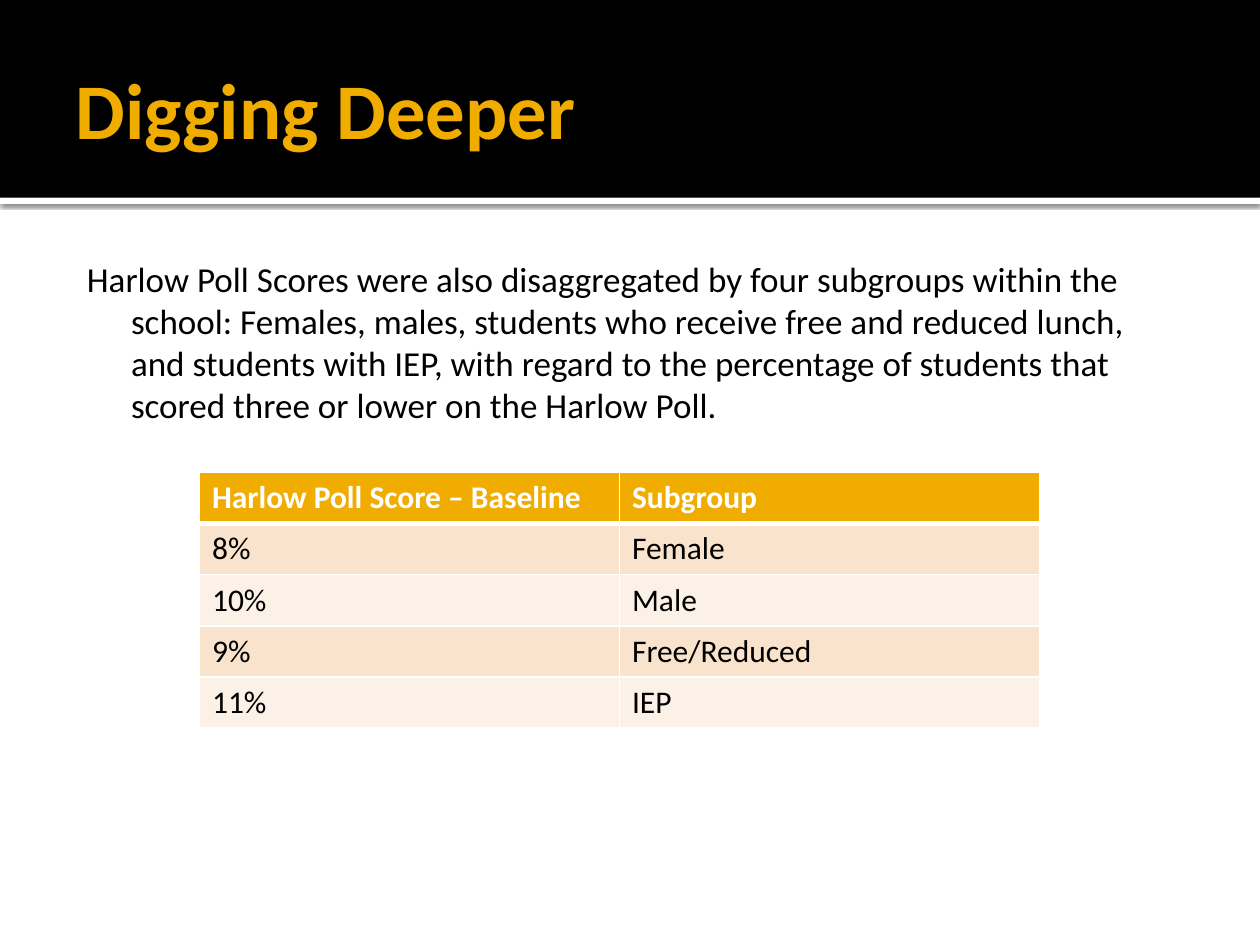
from lxml import etree
from pptx import Presentation
from pptx.dml.color import RGBColor
from pptx.enum.shapes import MSO_SHAPE
from pptx.enum.text import MSO_ANCHOR, MSO_AUTO_SIZE, PP_ALIGN
from pptx.oxml import parse_xml
from pptx.oxml.ns import nsdecls, qn
from pptx.util import Pt

# Content
TITLE = "Digging Deeper"
BODY = (
    "Harlow Poll Scores were also disaggregated by four subgroups within the school: "
    "Females, males, students who receive free and reduced lunch, and students with IEP, "
    "with regard to the percentage of students that scored three or lower on the Harlow Poll."
)
ROWS = [
    ("Harlow Poll Score – Baseline", "Subgroup"),
    ("8%", "Female"),
    ("10%", "Male"),
    ("9%", "Free/Reduced"),
    ("11%", "IEP"),
]

# Format, lengths in points
COLORS = {"black": "000000", "white": "FFFFFF", "gold": "F0AD00",
          "peach": "F9E3CC", "cream": "FCF1E7"}
FONT = "Calibri"
PAGE_WIDTH, PAGE_HEIGHT = 720, 540
BAND_HEIGHT, RULE_HEIGHT = 113, 3.6
TABLE_LEFT, TABLE_TOP, COLUMN_WIDTH, ROW_HEIGHT = 114, 270, 240, 29.2
TITLE_BOX = {"left": 36, "top": 12.25, "width": 648, "height": 98.6}
BODY_BOX = {"left": 36, "top": 139.7, "width": 648, "height": 364.3}
TITLE_FRAME = {"margin_left": Pt(7.2), "margin_top": Pt(3.6), "margin_right": Pt(3.6),
               "margin_bottom": Pt(3.6), "vertical_anchor": MSO_ANCHOR.MIDDLE}
BODY_FRAME = {"margin_left": Pt(4.3), "margin_top": Pt(7.2), "margin_right": Pt(7.2),
              "margin_bottom": Pt(3.6), "vertical_anchor": MSO_ANCHOR.TOP}


def rgb(name):
    return RGBColor.from_string(COLORS[name])


def set_all(target, values):
    for name, value in values.items():
        setattr(target, name, value)


def write(frame, text, size, color, bold=False):
    frame.text = text
    paragraph = frame.paragraphs[0]
    set_all(paragraph, {"alignment": PP_ALIGN.LEFT, "space_before": Pt(0)})
    span = paragraph.runs[0]
    set_all(span.font, {"name": FONT, "size": Pt(size), "bold": bold})
    span.font.color.rgb = rgb(color)
    return paragraph


def fill_placeholder(box, place, frame_values, *text_values):
    set_all(box, {name: Pt(value) for name, value in place.items()})
    frame = box.text_frame
    set_all(frame, {"word_wrap": True, "auto_size": MSO_AUTO_SIZE.NONE, **frame_values})
    return write(frame, *text_values)


def add_bar(page, top, height, color):
    bar = page.shapes.add_shape(MSO_SHAPE.RECTANGLE, 0, Pt(top), Pt(PAGE_WIDTH), Pt(height))
    bar.shadow.inherit = False
    bar.fill.solid()
    bar.fill.fore_color.rgb = rgb(color)
    bar.line.fill.background()
    return bar


def add_border(cell, side, width):
    properties = cell._tc.get_or_add_tcPr()
    line = parse_xml(
        f'<a:{side} {nsdecls("a")} w="{Pt(width)}"><a:solidFill>'
        f'<a:srgbClr val="{COLORS["white"]}"/></a:solidFill></a:{side}>')
    properties.append(line)


deck = Presentation()
set_all(deck, {"slide_width": Pt(PAGE_WIDTH), "slide_height": Pt(PAGE_HEIGHT)})
page = deck.slides.add_slide(deck.slide_layouts[1])

# Header band and the shadowed rule below it, sent behind the text
rule = add_bar(page, BAND_HEIGHT, RULE_HEIGHT, "white")
rule.element.spPr.find(qn("a:effectLst")).append(parse_xml(
    f'<a:outerShdw {nsdecls("a")} blurRad="{Pt(2.5)}" dist="{Pt(0.8)}" dir="5400000">'
    f'<a:srgbClr val="{COLORS["black"]}"><a:alpha val="60000"/></a:srgbClr></a:outerShdw>'))
band = add_bar(page, 0, BAND_HEIGHT, "black")
for bar in (band, rule):
    bar.element.getparent().insert(2, bar.element)

# Title and body
fill_placeholder(page.shapes.title, TITLE_BOX, TITLE_FRAME, TITLE, 45, "gold", True)
paragraph = fill_placeholder(page.placeholders[1], BODY_BOX, BODY_FRAME, BODY, 20, "black")
properties = paragraph._p.get_or_add_pPr()
properties.set("marL", str(Pt(34.56)))
properties.set("indent", str(Pt(-25.2)))
etree.SubElement(properties, qn("a:buNone"))

# Score table
column_count = len(ROWS[0])
table = page.shapes.add_table(
    len(ROWS), column_count, Pt(TABLE_LEFT), Pt(TABLE_TOP),
    Pt(COLUMN_WIDTH * column_count), Pt(ROW_HEIGHT * len(ROWS))).table
for row_index, row in enumerate(ROWS):
    table.rows[row_index].height = Pt(ROW_HEIGHT)
    header = row_index == 0
    fill = "gold" if header else ("cream", "peach")[row_index % 2]
    widths = {"lnL": 1, "lnR": 1, "lnT": 3 if row_index == 1 else 1, "lnB": 3 if header else 1}
    for column_index, text in enumerate(row):
        cell = table.cell(row_index, column_index)
        write(cell.text_frame, text, 18, "white" if header else "black", header)
        for side, width in widths.items():
            add_border(cell, side, width)
        cell.fill.solid()
        cell.fill.fore_color.rgb = rgb(fill)

deck.save("out.pptx")
